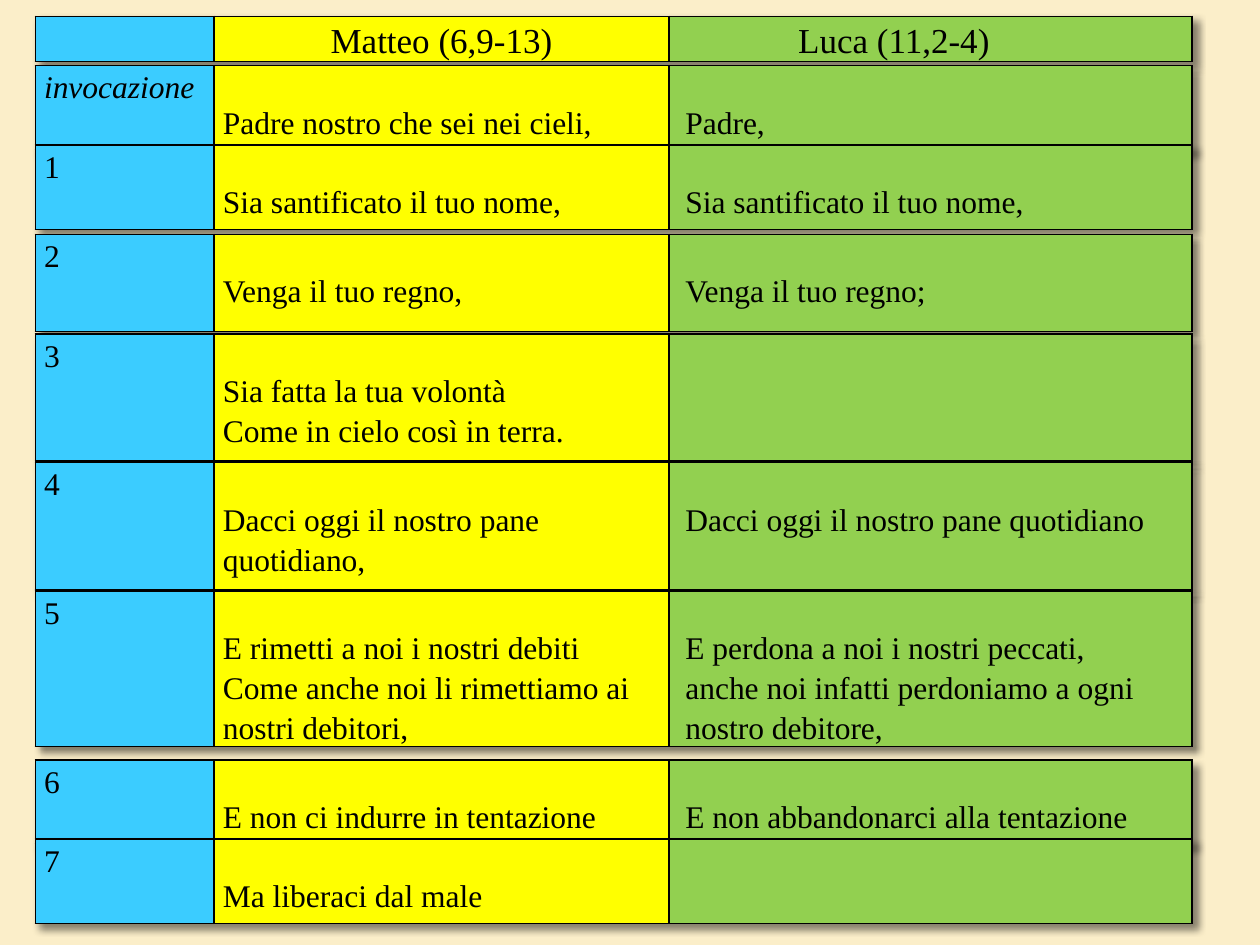
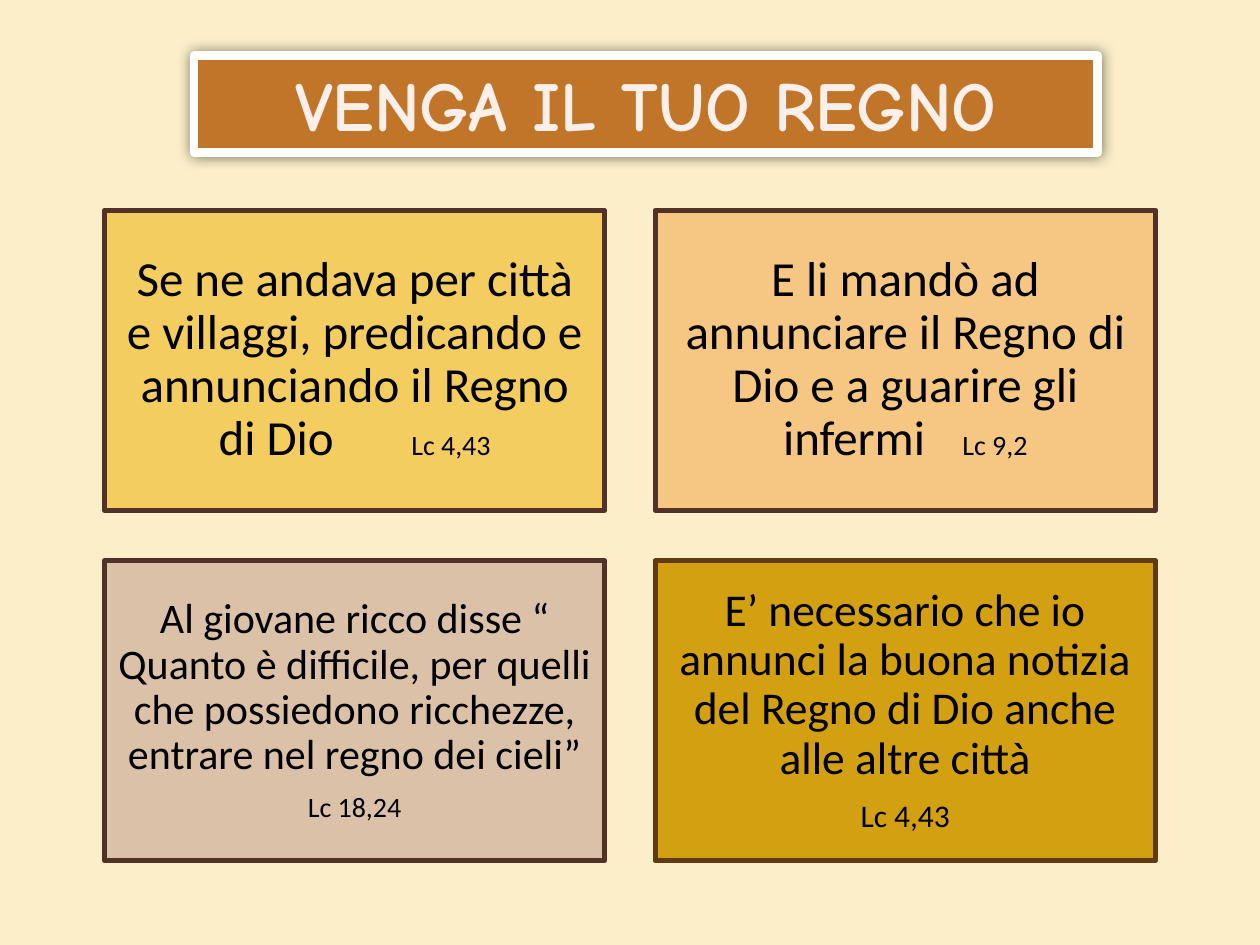
from dataclasses import dataclass

from lxml import etree
from pptx import Presentation
from pptx.dml.color import RGBColor
from pptx.enum.shapes import MSO_SHAPE as Shape
from pptx.enum.text import MSO_ANCHOR as Anchor, MSO_AUTO_SIZE as AutoSize, PP_ALIGN as Align
from pptx.oxml.ns import qn
from pptx.util import Inches, Pt


@dataclass(frozen=True)
class Theme:
    background: str = "FBEEC9"
    ink: str = "000000"
    columns: tuple = ("3BCCFF", "FFFF00", "92D050")
    banner: str = "C17529"
    banner_line: str = "FFFFFF"
    banner_text: str = "FCEFE9"
    verse_font: str = "Times New Roman"
    banner_font: str = "Comic Neue"
    card_font: str = "Calibri"
    header_size: int = 20
    verse_size: int = 18
    banner_size: int = 40


THEME = Theme()
WIDTH, HEIGHT = 10, 7.5

HEADER = (0.13, 0.36, "", ["Matteo (6,9-13)"], ["Luca (11,2-4)"])
VERSES = [
    (0.52, 0.67, "invocazione", ["Padre nostro che sei nei cieli,"], ["Padre,"]),
    (1.15, 0.67, "1", ["Sia santificato il tuo nome,"], ["Sia santificato il tuo nome,"]),
    (1.86, 0.77, "2", ["Venga il tuo regno,"], ["Venga il tuo regno;"]),
    (2.65, 1.01, "3", ["Sia fatta la tua volontà", "Come in cielo così in terra."], []),
    (3.67, 1.01, "4", ["Dacci oggi il nostro pane quotidiano,"],
     ["Dacci oggi il nostro pane quotidiano"]),
    (4.69, 1.23, "5",
     ["E rimetti a noi i nostri debiti", "Come anche noi li rimettiamo ai nostri debitori,"],
     ["E perdona a noi i nostri peccati,", "anche noi infatti perdoniamo a ogni",
      "nostro debitore,"]),
    (6.03, 0.67, "6", ["E non ci indurre in tentazione"],
     ["E non abbandonarci alla tentazione"]),
    (6.66, 0.67, "7", ["Ma liberaci dal male"], []),
]
TABLE_LEFT = 0.28
COLUMN_WIDTHS = (1.42, 3.61, 4.15)
CELL_PAD, LUCA_INDENT, LUCA_HEADER_RIGHT, VERSE_DROP = 0.07, 0.13, 0.65, 0.28

BANNER = "VENGA IL TUO REGNO"
CARDS = [
    dict(quote="Se ne andava per città e villaggi, predicando e annunciando il Regno di Dio",
         source="Lc 4,43", size=28, source_size=16, gap=38, pad=0.12,
         fill="F3CD60", line="523227"),
    dict(quote="E li mandò ad annunciare il Regno di Dio e a guarire gli infermi",
         source="Lc 9,2", size=28, source_size=16, gap=15, pad=0.12,
         fill="F6C782", line="523227"),
    dict(quote="Al giovane ricco disse “ Quanto è difficile, per quelli che possiedono "
               "ricchezze, entrare nel regno dei cieli”",
         source="Lc 18,24", size=24, source_size=16, gap=None, pad=0.1,
         fill="DBC1A7", line="523227"),
    dict(quote="E’ necessario che io annunci la buona notizia del Regno di Dio anche "
               "alle altre città",
         source="Lc 4,43", size=26, source_size=18, gap=None, pad=0.11,
         fill="D2A010", line="603A14"),
]
CARD_WIDTH, CARD_HEIGHT, CARD_GAP, CARD_TOP = 3.97, 2.38, 0.4, 1.67


def paint(fill, color):
    fill.solid()
    fill.fore_color.rgb = RGBColor.from_string(color)


def outline(box, color, width):
    paint(box.line.fill, color)
    box.line.width = Pt(width)


def add_span(para, text, font, size, color=THEME.ink, bold=False, italic=False, tracking=0):
    span = para.add_run()
    span.text = text
    span.font.name, span.font.size = font, Pt(size)
    span.font.bold, span.font.italic = bold, italic
    span.font.color.rgb = RGBColor.from_string(color)
    if tracking:
        span.font._element.set("spc", str(tracking * 100))
    return span


def set_margins(target, left, top, right, bottom):
    target.margin_left, target.margin_top = Inches(left), Inches(top)
    target.margin_right, target.margin_bottom = Inches(right), Inches(bottom)


def shadow_effect(blur, distance, alpha):
    effects = etree.Element(qn("a:effectLst"))
    shadow = etree.SubElement(effects, qn("a:outerShdw"), blurRad=str(Pt(blur)),
                              dist=str(Pt(distance)), dir="2700000", algn="tl",
                              rotWithShape="0")
    color = etree.SubElement(shadow, qn("a:srgbClr"), val=THEME.ink)
    etree.SubElement(color, qn("a:alpha"), val=str(alpha * 1000))
    return effects


def add_borders(cell, color=THEME.ink, width=1):
    properties = cell._tc.get_or_add_tcPr()
    for place, side in enumerate(("lnL", "lnR", "lnT", "lnB")):
        border = etree.Element(qn(f"a:{side}"), w=str(Pt(width)))
        fill = etree.SubElement(border, qn("a:solidFill"))
        etree.SubElement(fill, qn("a:srgbClr"), val=color)
        properties.insert(place, border)


def fill_cell(cell, lines, color, margins, **style):
    paint(cell.fill, color)
    add_borders(cell)
    set_margins(cell, *margins)
    align = style.pop("align", Align.LEFT)
    for index, line in enumerate(lines):
        frame = cell.text_frame
        para = frame.add_paragraph() if index else frame.paragraphs[0]
        para.alignment, para.line_spacing = align, 1.15
        add_span(para, line, THEME.verse_font, **style)


def add_row_table(page, row, header=False):
    top, height, label, matteo, luca = row
    frame = page.shapes.add_table(1, 3, Inches(TABLE_LEFT), Inches(top),
                                  Inches(sum(COLUMN_WIDTHS)), Inches(height))
    table = frame.table
    table.first_row = table.horz_banding = False
    table._tbl.tblPr.insert(0, shadow_effect(4, 4, 45))
    table.rows[0].height = Inches(height)
    for column, width in zip(table.columns, COLUMN_WIDTHS):
        column.width = Inches(width)
    drop = 0 if header else VERSE_DROP
    luca_left, luca_right = (CELL_PAD, LUCA_HEADER_RIGHT) if header else (LUCA_INDENT, CELL_PAD)
    margins = [(CELL_PAD, 0, CELL_PAD, 0), (CELL_PAD, drop, CELL_PAD, 0),
               (luca_left, drop, luca_right, 0)]
    contents = [[label] if label else [], matteo, luca]
    for index, lines in enumerate(contents):
        fill_cell(table.cell(0, index), lines, THEME.columns[index], margins[index],
                  size=THEME.header_size if header else THEME.verse_size,
                  align=Align.CENTER if header else Align.LEFT,
                  italic=lines == ["invocazione"])


def add_banner(page):
    box = page.shapes.title
    box.left, box.top, box.width, box.height = map(Inches, (1.54, 0.44, 7.17, 0.77))
    paint(box.fill, THEME.banner)
    outline(box, THEME.banner_line, 5)
    box._element.spPr.append(shadow_effect(7.5, 0, 50))
    frame = box.text_frame
    frame.auto_size, frame.word_wrap = AutoSize.NONE, True
    frame.vertical_anchor = Anchor.MIDDLE
    para = frame.paragraphs[0]
    para.alignment = Align.CENTER
    add_span(para, BANNER, THEME.banner_font, THEME.banner_size, THEME.banner_text, bold=True)


def add_card(page, index, card):
    row, column = divmod(index, 2)
    left = (WIDTH - 2 * CARD_WIDTH - CARD_GAP) / 2 + column * (CARD_WIDTH + CARD_GAP)
    top = CARD_TOP + row * (CARD_HEIGHT + CARD_GAP)
    box = page.shapes.add_shape(Shape.RECTANGLE, Inches(left), Inches(top),
                                Inches(CARD_WIDTH), Inches(CARD_HEIGHT))
    box.shadow.inherit = False
    paint(box.fill, card["fill"])
    outline(box, card["line"], 3)
    frame = box.text_frame
    frame.word_wrap, frame.vertical_anchor = True, Anchor.MIDDLE
    set_margins(frame, *[card["pad"]] * 4)
    para = frame.paragraphs[0]
    add_span(para, card["quote"], THEME.card_font, card["size"])
    if card["gap"]:
        add_span(para, " ", THEME.card_font, card["size"], tracking=card["gap"])
    else:
        para.space_after = Pt(card["size"] * 0.35)
        para = frame.add_paragraph()
    add_span(para, card["source"], THEME.card_font, card["source_size"])
    for para in frame.paragraphs:
        para.alignment, para.line_spacing = Align.CENTER, 0.9


def main():
    deck = Presentation()
    deck.slide_width, deck.slide_height = Inches(WIDTH), Inches(HEIGHT)
    paint(deck.slide_master.background.fill, THEME.background)
    title_only, blank = deck.slide_layouts[5], deck.slide_layouts[6]

    comparison = deck.slides.add_slide(blank)
    add_row_table(comparison, HEADER, header=True)
    for verse in VERSES:
        add_row_table(comparison, verse)

    kingdom = deck.slides.add_slide(title_only)
    add_banner(kingdom)
    for index, card in enumerate(CARDS):
        add_card(kingdom, index, card)

    deck.save("out.pptx")


if __name__ == "__main__":
    main()
